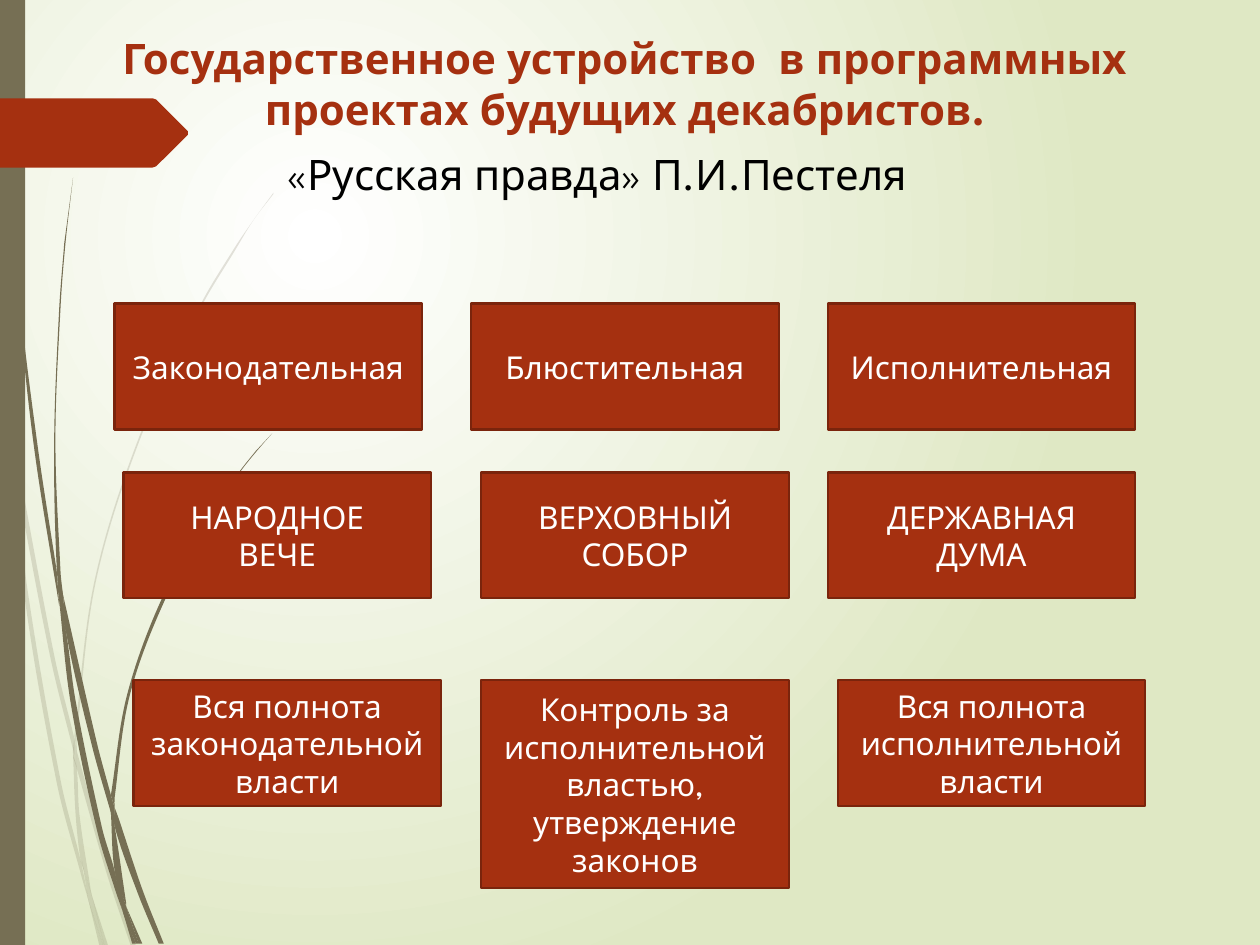
from math import dist

from lxml import etree
from pptx import Presentation
from pptx.dml.color import RGBColor
from pptx.enum.shapes import MSO_SHAPE
from pptx.enum.text import MSO_ANCHOR, MSO_AUTO_SIZE, PP_ALIGN
from pptx.oxml.ns import qn
from pptx.util import Inches, Pt

RECTANGLE = MSO_SHAPE.RECTANGLE
TOP, MIDDLE = MSO_ANCHOR.TOP, MSO_ANCHOR.MIDDLE
NO_FIT, GROW = MSO_AUTO_SIZE.NONE, MSO_AUTO_SIZE.SHAPE_TO_FIT_TEXT
LEFT, CENTER = PP_ALIGN.LEFT, PP_ALIGN.CENTER

FONT = "League Spartan"
RUST, DARK_RUST, OLIVE = "A53010", "7A240C", "766F54"
WHITE, PALE_GREEN, BLACK = "FFFFFF", "DFE8C4", "000000"
BOX_WIDTH = 2.44

# Top of each row, then left, height and text of its boxes
BRANCH_ROWS = [
    (2.41, [(0.91, 1, "Законодательная"),
            (3.74, 1, "Блюстительная"),
            (6.57, 1, "Исполнительная")]),
    (3.75, [(0.98, 1, "НАРОДНОЕ\nВЕЧЕ"),
            (3.82, 1, "ВЕРХОВНЫЙ СОБОР"),
            (6.57, 1, "ДЕРЖАВНАЯ ДУМА")]),
    (5.4, [(1.06, 1, "Вся полнота законодательной власти"),
           (3.82, 1.65, "Контроль за исполнительной властью, утверждение законов"),
           (6.65, 1, "Вся полнота исполнительной власти")]),
]

ARROW_TAB = [(0, 0.78), (1.21, 0.78), (1.24, 0.79), (1.49, 1.04),
             (1.49, 1.07), (1.24, 1.32), (1.21, 1.33), (0, 1.33)]

# Each blade of grass is a pair of smooth edges, one there and one back
FAINT_BLADES = [
    ([(0.08, 3.5), (0.06, 3.22), (0, 2.82)], [(0, 2.99), (0.07, 3.44), (0.08, 3.5)]),
    ([(0.59, 5.86), (0.43, 5.2), (0.1, 3.45)], [(0.12, 3.76), (0.4, 5.22), (0.59, 5.99)]),
    ([(0.61, 6.1), (0.85, 6.94), (1.04, 7.51)],
     [(1.08, 7.51), (0.88, 6.92), (0.64, 6.07), (0.61, 5.96)]),
    ([(0.73, 7.11), (0.83, 7.51)], [(0.86, 7.51), (0.73, 7.11)]),
    ([(0.08, 3.5), (0.19, 4.7), (0.45, 6.21), (0.64, 6.93), (0.7, 7.14)],
     [(0.69, 7.07), (0.64, 6.83), (0.48, 6.19), (0.22, 4.69), (0.12, 3.76), (0.08, 3.5)]),
    ([(0.58, 5.99), (0.6, 6.46), (0.64, 6.83), (0.67, 6.92), (0.73, 7.11)],
     [(0.72, 7.06), (0.63, 6.46), (0.61, 6.1), (0.58, 5.99)]),
    ([(0.61, 5.96), (0.61, 5.84), (0.76, 4.62), (1.11, 3.49), (1.59, 2.45),
      (1.87, 1.98), (2.01, 1.75), (2.17, 1.54)],
     [(2.17, 1.53), (2.01, 1.75), (1.86, 1.97), (1.58, 2.44), (1.1, 3.48),
      (0.75, 4.61), (0.59, 5.84)]),
    ([(0.7, 7.14), (0.79, 7.51)], [(0.82, 7.51), (0.7, 7.14)]),
    ([(0.59, 5.86), (0.58, 5.99), (0.61, 6.1)], [(0.61, 5.96), (0.59, 5.86)]),
    ([(0.65, 6.83), (0.69, 7.07), (0.7, 7.14), (0.82, 7.51)],
     [(0.83, 7.51), (0.73, 7.11), (0.67, 6.92), (0.65, 6.83)]),
]
SOLID_BLADES = [
    ([(0.02, 0), (0.03, 0.48), (0.05, 1.1), (0.14, 2.33), (0.27, 3.55), (0.47, 4.81)],
     [(0.45, 4.53), (0.3, 3.55), (0.15, 2.32), (0.06, 1.09), (0.04, 0.48), (0.03, 0)]),
    ([(0.5, 4.72), (0.53, 5.05), (0.73, 5.92), (0.88, 6.45)],
     [(0.88, 6.31), (0.77, 5.9), (0.5, 4.72)]),
    ([(0.91, 6.41), (0.91, 6.56), (1.09, 7.08), (1.26, 7.49)],
     [(1.3, 7.49), (1.13, 7.06), (0.94, 6.49), (0.91, 6.41)]),
    ([(0.47, 4.77), (0.56, 5.57), (0.77, 6.59), (0.92, 7.08), (0.97, 7.22)],
     [(0.96, 7.17), (0.91, 6.91), (0.81, 6.57), (0.6, 5.56), (0.53, 5.05), (0.47, 4.77)]),
    ([(0.5, 4.72), (0.48, 4.53), (0.44, 3.49), (0.48, 2.45), (0.52, 1.93), (0.58, 1.41)],
     [(0.51, 1.93), (0.47, 2.45), (0.43, 3.49), (0.45, 4.49), (0.49, 4.72)]),
    ([(1, 7.19), (1.1, 7.49)], [(1.13, 7.49), (1, 7.19)]),
    ([(0.45, 4.49), (0.47, 4.77), (0.53, 5.05)], [(0.5, 4.72), (0.45, 4.49)]),
    ([(0.91, 6.41), (0.91, 6.33), (1.03, 5.52), (1.31, 4.76), (1.69, 4.06),
      (1.91, 3.74), (2.03, 3.59), (2.16, 3.44)],
     [(2.03, 3.58), (1.91, 3.73), (1.68, 4.05), (1.29, 4.74), (1.01, 5.51), (0.88, 6.31)]),
    ([(0.97, 7.22), (1.05, 7.49)], [(1.08, 7.49), (0.97, 7.22)]),
    ([(0.88, 6.45), (0.91, 6.91), (1, 7.19)], [(1, 7.16), (0.91, 6.56), (0.88, 6.45)]),
    ([(0.88, 6.31), (0.88, 6.45), (0.91, 6.56)], [(0.91, 6.41), (0.88, 6.31)]),
    ([(0.91, 6.91), (0.97, 7.22), (1.08, 7.49)], [(1.1, 7.49), (1, 7.19), (0.91, 6.91)]),
]


def color(value):
    return RGBColor.from_string(value)


def set_values(target, values):
    for name, value in values.items():
        setattr(target, name, value)


def paint(shape, fill, line=None, opacity=100):
    shape.shadow.inherit = False
    shape.fill.solid()
    shape.fill.fore_color.rgb = color(fill)
    if opacity < 100:
        tone = shape.fill._xPr.find(qn("a:solidFill"))[0]
        etree.SubElement(tone, qn("a:alpha"), val=str(opacity * 1000))
    if line:
        shape.line.color.rgb = color(line)
        shape.line.width = Pt(1.25)
    else:
        shape.line.fill.background()


def write(shape, text, size, tone, align=CENTER, bold=False, **frame_values):
    frame = shape.text_frame
    set_values(frame, {"word_wrap": True, **frame_values})
    para = frame.paragraphs[0]
    para.text = text
    para.alignment = align
    for span in para.runs:
        set_values(span.font, {"name": FONT, "size": Pt(size), "bold": bold})
        span.font.color.rgb = color(tone)


def curve_controls(edge):
    """Two control points for each segment, along tangents scaled to its length."""
    padded = [edge[0], *edge, edge[-1]]
    for before, start, end, after in zip(padded, padded[1:], padded[2:], padded[3:]):
        pull_start = dist(start, end) / dist(before, end) / 3
        pull_end = dist(start, end) / dist(start, after) / 3
        yield ([s + (e - b) * pull_start for b, s, e in zip(before, start, end)],
               [e - (a - s) * pull_end for s, e, a in zip(start, end, after)])


def add_outline(shapes, points, fill, opacity=100):
    corners = [(Inches(x), Inches(y)) for x, y in points]
    builder = shapes.build_freeform(*corners[0], scale=1.0)
    builder.add_line_segments(corners[1:], close=True)
    outline = builder.convert_to_shape()
    paint(outline, fill, opacity=opacity)
    return outline


def add_blade(shapes, there, back, opacity):
    blade = add_outline(shapes, there + back, OLIVE, opacity)
    segments = list(blade.element.iter(qn("a:lnTo")))
    controls = [*curve_controls(there), None, *curve_controls(back)]
    for segment, pair in zip(segments, controls):
        if pair:
            segment.tag = qn("a:cubicBezTo")
            for place, (x, y) in enumerate(pair):
                point = etree.Element(qn("a:pt"), x=str(Inches(x) - blade.left),
                                      y=str(Inches(y) - blade.top))
                segment.insert(place, point)


def add_grass(page, blades, opacity):
    group = page.shapes.add_group_shape()
    for there, back in blades:
        add_blade(group.shapes, there, back, opacity)


def add_box(page, left, top, width, height, fill, line=None):
    box = page.shapes.add_shape(RECTANGLE, *map(Inches, (left, top, width, height)))
    paint(box, fill, line)
    return box


def set_glow_background(page):
    """Round gradient centred in the upper left quarter."""
    fill = page.background.fill
    fill.gradient()
    for stop, tone in zip(fill.gradient_stops, (WHITE, PALE_GREEN)):
        stop.color.rgb = color(tone)
    gradient = page.element.find(".//" + qn("a:gradFill"))
    gradient.remove(gradient.find(qn("a:lin")))
    circle = etree.SubElement(gradient, qn("a:path"), path="circle")
    etree.SubElement(circle, qn("a:fillToRect"), l="50000", t="50000", r="100000", b="100000")


def add_title(page, text):
    title = page.shapes.title
    set_values(title, {"left": Inches(0.51), "top": Inches(0.21),
                       "width": Inches(8.9), "height": Inches(1.02)})
    write(title, text, 24, RUST, bold=True, vertical_anchor=TOP, auto_size=NO_FIT)


def main():
    deck = Presentation()
    set_values(deck, {"slide_width": Inches(10), "slide_height": Inches(7.5)})
    page = deck.slides.add_slide(deck.slide_layouts[5])
    set_glow_background(page)
    add_grass(page, FAINT_BLADES, 20)
    add_grass(page, SOLID_BLADES, 100)
    add_box(page, 0, 0, 0.2, 7.5, OLIVE)
    add_outline(page.shapes, ARROW_TAB, RUST)
    add_title(page, "Государственное устройство  в программных проектах будущих декабристов.")
    for top, boxes in BRANCH_ROWS:
        for left, height, text in boxes:
            box = add_box(page, left, top, BOX_WIDTH, height, RUST, DARK_RUST)
            write(box, text, 18, WHITE, vertical_anchor=MIDDLE)
    subtitle = page.shapes.add_textbox(*map(Inches, (2.18, 1.13, 6.38, 0.5)))
    write(subtitle, "«Русская правда» П.И.Пестеля", 24, BLACK, LEFT, auto_size=GROW)
    deck.save("out.pptx")


if __name__ == "__main__":
    main()
